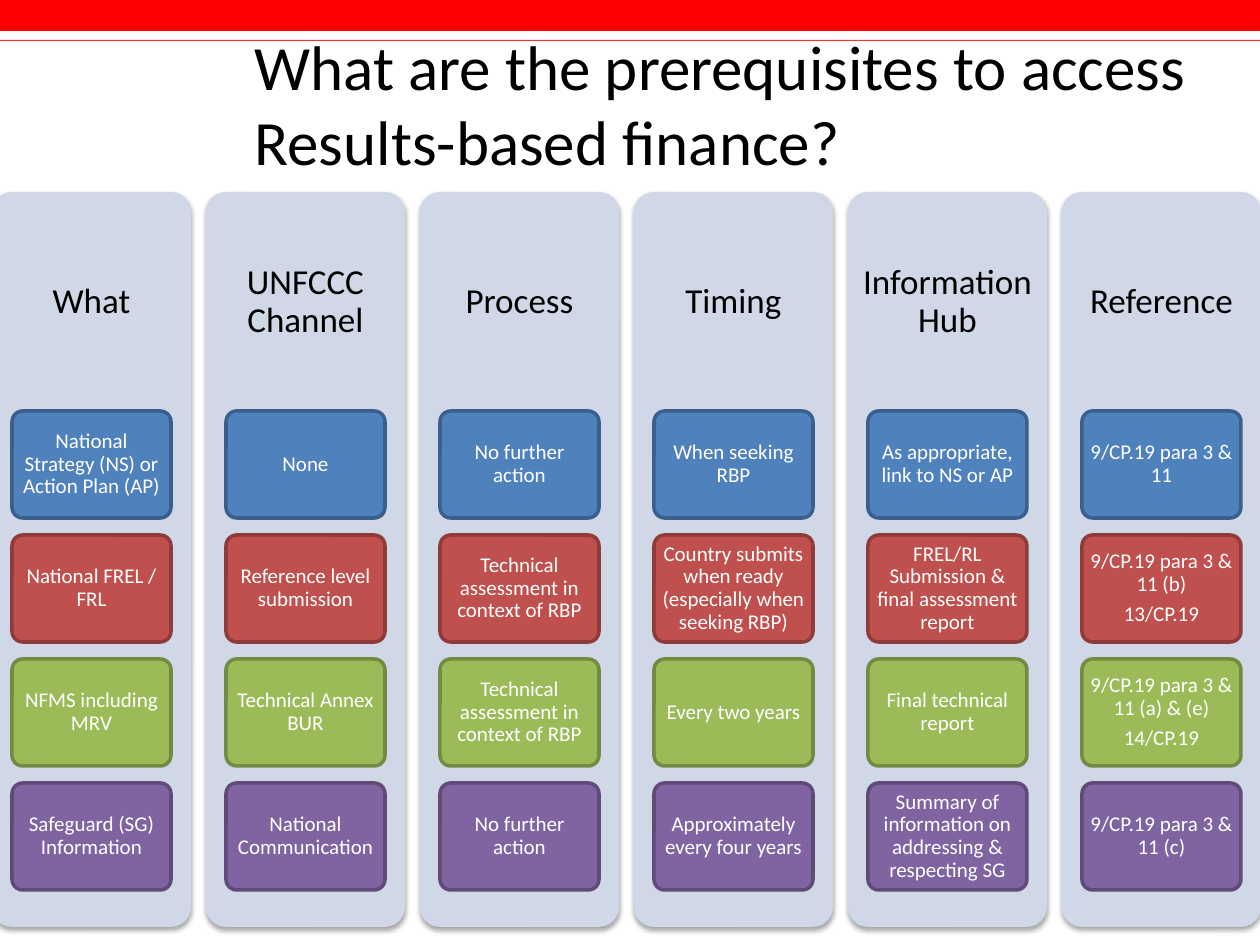
from dataclasses import dataclass

from lxml import etree
from pptx import Presentation
from pptx.dml.color import RGBColor
from pptx.enum.shapes import MSO_SHAPE
from pptx.enum.text import MSO_ANCHOR, MSO_AUTO_SIZE, PP_ALIGN
from pptx.oxml.ns import qn
from pptx.util import Pt

RECT, ROUNDED = MSO_SHAPE.RECTANGLE, MSO_SHAPE.ROUNDED_RECTANGLE
TOP, MIDDLE = MSO_ANCHOR.TOP, MSO_ANCHOR.MIDDLE
LEFT, CENTER = PP_ALIGN.LEFT, PP_ALIGN.CENTER
GROW = MSO_AUTO_SIZE.SHAPE_TO_FIT_TEXT

PX = 914400 // 126  # EMU per px
SLIDE_W, SLIDE_H = 1260, 945


@dataclass(frozen=True)
class Theme:
    font: str = "Calibri"
    title_size: int = 36
    header_size: int = 20
    cell_size: int = 12
    text: str = "000000"
    cell_text: str = "FFFFFF"
    bar: str = "FF0000"
    rule: str = "FF3333"
    panel: str = "D0D8E8"
    # Fill and outline of each row of cells
    rows: tuple = (("4F81BD", "3A5F8C"), ("C0504D", "8E3B39"),
                   ("9BBB59", "738A42"), ("8064A2", "5F4A78"))


THEME = Theme()

# Grid of columns and cells, in px
PANEL_X, PANEL_Y, PANEL_W, PANEL_H, PANEL_STEP = -8, 192, 199, 735, 214
HEADER_H = 220
CELL_X, CELL_Y, CELL_W, CELL_H, CELL_STEP = 20, 411, 159, 107, 124

TITLE = "What are the prerequisites to access Results-based finance?"
# Header, then one cell per row; a line break separates paragraphs
COLUMNS = [
    ("What", ["National Strategy (NS) or Action Plan (AP)",
              "National FREL / FRL",
              "NFMS including MRV",
              "Safeguard (SG) Information"]),
    ("UNFCCC Channel", ["None",
                        "Reference level submission",
                        "Technical Annex BUR",
                        "National Communication"]),
    ("Process", ["No further action",
                 "Technical assessment in context of RBP",
                 "Technical assessment in context of RBP",
                 "No further action"]),
    ("Timing", ["When seeking RBP",
                "Country submits when ready (especially when seeking RBP)",
                "Every two years",
                "Approximately every four years"]),
    ("Information Hub", ["As appropriate, link to NS or AP",
                         "FREL/RL Submission & final assessment report",
                         "Final technical report",
                         "Summary of information on addressing & respecting SG"]),
    ("Reference", ["9/CP.19 para 3 & 11",
                   "9/CP.19 para 3 & 11 (b)\n13/CP.19",
                   "9/CP.19 para 3 & 11 (a) & (e)\n14/CP.19",
                   "9/CP.19 para 3 & 11 (c)"]),
]


def box(x, y, w, h):
    return [v * PX for v in (x, y, w, h)]


def set_font(p, size, color):
    p.font.name = THEME.font
    p.font.size = Pt(size)
    p.font.color.rgb = RGBColor.from_string(color)


def set_text(sp, text, size, color, inset):
    """Centred text with tight lines, one paragraph per line of text."""
    tf = sp.text_frame
    tf.text = text
    tf.word_wrap = True
    tf.vertical_anchor = MIDDLE
    tf.margin_left = tf.margin_right = inset * PX
    tf.margin_top = tf.margin_bottom = inset * PX
    for p in tf.paragraphs:
        p.alignment = CENTER
        p.line_spacing = 0.9
        p.space_after = Pt(round(0.35 * size, 1))
        set_font(p, size, color)


def add_block(slide, kind, bounds, fill, line=None):
    sp = slide.shapes.add_shape(kind, *box(*bounds))
    sp.shadow.inherit = False
    sp.fill.solid()
    sp.fill.fore_color.rgb = RGBColor.from_string(fill)
    if line:
        sp.line.color.rgb = RGBColor.from_string(line)
        sp.line.width = Pt(2)
    else:
        sp.line.fill.background()
    if kind == ROUNDED:
        sp.adjustments[0] = 0.1
    return sp


def add_soft_shadow(sp):
    effects = sp._element.spPr.find(qn("a:effectLst"))
    shadow = etree.SubElement(effects, qn("a:outerShdw"), blurRad=str(Pt(3.1)),
                              dist=str(Pt(1.8)), dir="5400000", rotWithShape="0")
    color = etree.SubElement(shadow, qn("a:srgbClr"), val="000000")
    etree.SubElement(color, qn("a:alpha"), val="35000")


def add_title(slide):
    sp = slide.shapes.title
    sp.left, sp.top, sp.width, sp.height = box(242, 21, 1018, 165)
    tf = sp.text_frame
    tf.text = TITLE
    tf.word_wrap = True
    tf.auto_size = GROW
    tf.vertical_anchor = TOP
    p = tf.paragraphs[0]
    p.alignment = LEFT
    set_font(p, THEME.title_size, THEME.text)


def add_column(slide, x, header, cells):
    panel = add_block(slide, ROUNDED, (x, PANEL_Y, PANEL_W, PANEL_H), THEME.panel)
    add_soft_shadow(panel)
    tb = slide.shapes.add_textbox(*box(x, PANEL_Y, PANEL_W, HEADER_H))
    set_text(tb, header, THEME.header_size, THEME.text, inset=10)
    for row, (text, (fill, line)) in enumerate(zip(cells, THEME.rows)):
        bounds = (x + CELL_X, CELL_Y + row * CELL_STEP, CELL_W, CELL_H)
        cell = add_block(slide, ROUNDED, bounds, fill, line)
        set_text(cell, text, THEME.cell_size, THEME.cell_text, inset=4)


def main():
    prs = Presentation()
    prs.slide_width, prs.slide_height = SLIDE_W * PX, SLIDE_H * PX
    slide = prs.slides.add_slide(prs.slide_layouts[5])

    # Top band and thin rule
    add_block(slide, RECT, (0, 0, SLIDE_W, 31), THEME.bar)
    add_block(slide, RECT, (0, 40, SLIDE_W, 1), THEME.rule)

    add_title(slide)

    # Columns of prerequisites
    for i, (header, cells) in enumerate(COLUMNS):
        add_column(slide, PANEL_X + i * PANEL_STEP, header, cells)

    prs.save("out.pptx")


if __name__ == "__main__":
    main()
